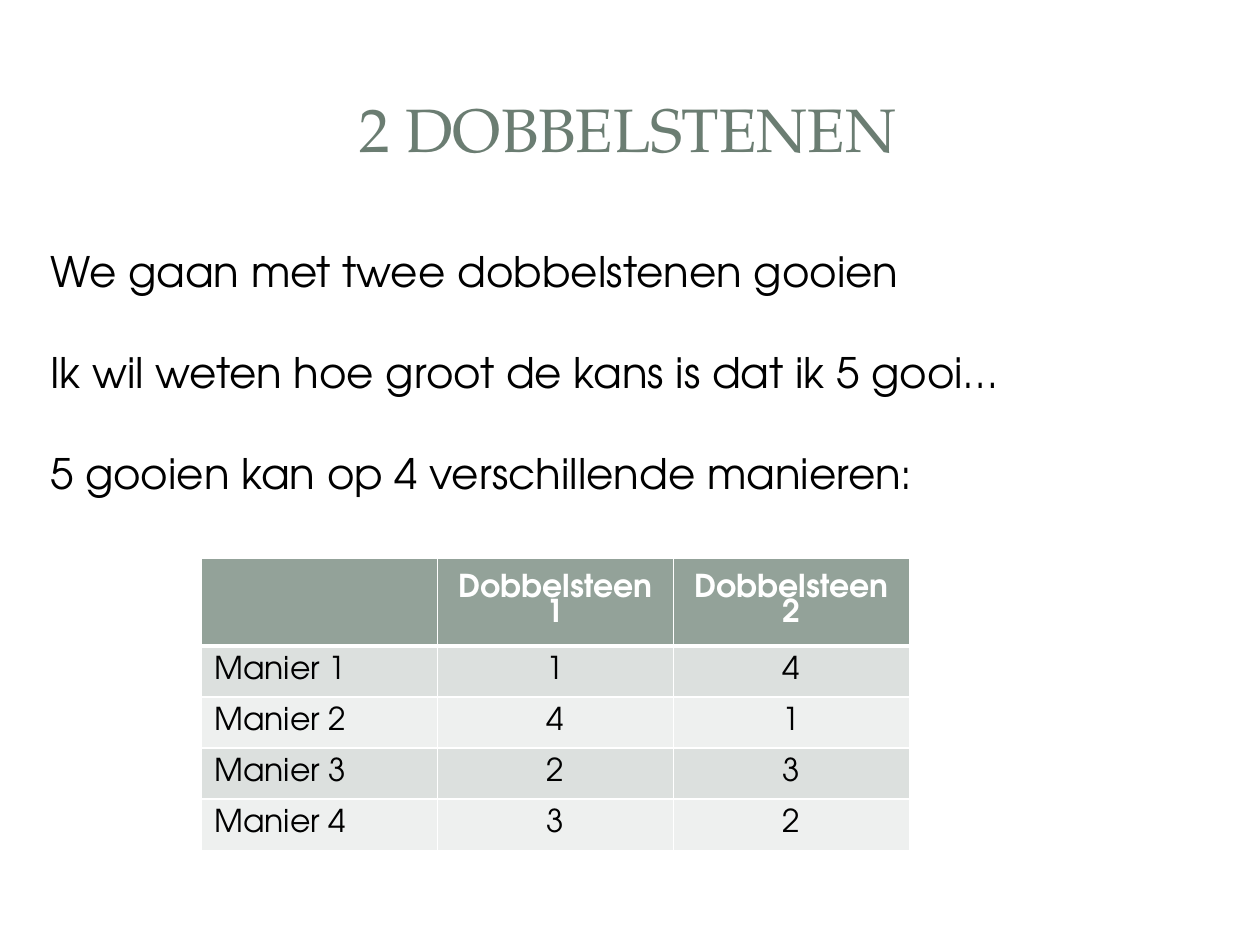
import pptx
import pptx.dml.color
import pptx.enum.shapes
import pptx.enum.text
import pptx.oxml
import pptx.util
from lxml import etree

Pt = pptx.util.Pt
RGBColor = pptx.dml.color.RGBColor
PP_ALIGN = pptx.enum.text.PP_ALIGN
MSO_ANCHOR = pptx.enum.text.MSO_ANCHOR
MSO_SHAPE = pptx.enum.shapes.MSO_SHAPE

TITLE = "2 DOBBELSTENEN"
SENTENCES = [
    "We gaan met twee dobbelstenen gooien",
    "Ik wil weten hoe groot de kans is dat ik 5 gooi…",
    "5 gooien kan op 4 verschillende manieren:",
]
ROWS = [
    ("", "Dobbelsteen 1", "Dobbelsteen 2"),
    ("Manier 1", "1", "4"),
    ("Manier 2", "4", "1"),
    ("Manier 3", "2", "3"),
    ("Manier 4", "3", "2"),
]
# Preset, left, top, width, height, opacity in percent
PANELS = [
    (MSO_SHAPE.ROUNDED_RECTANGLE, 7.2, 7.92, 705.6, 524.88, 100),
    (MSO_SHAPE.RECTANGLE, 21.6, 21.6, 676.8, 104.4, 83),
    (MSO_SHAPE.RECTANGLE, 29.52, 29.52, 660.24, 87.84, 100),
]

TITLE_FONT = "TeX Gyre Pagella"
BODY_FONT = "TeX Gyre Adventor"
WHITE = RGBColor(0xFF, 0xFF, 0xFF)
BLACK = RGBColor(0x00, 0x00, 0x00)
TITLE_GREEN = RGBColor(0x6B, 0x7D, 0x72)
HEADER_GREEN = RGBColor(0x93, 0xA2, 0x99)
BANDS = [RGBColor(0xDC, 0xE0, 0xDE), RGBColor(0xEE, 0xF0, 0xEF)]

COLUMN_WIDTH = 134.9
HEADER_HEIGHT = 49.9
ROW_HEIGHT = 29.2


def add_panel(page, preset, left, top, width, height, opacity):
    panel = page.shapes.add_shape(preset, Pt(left), Pt(top), Pt(width), Pt(height))
    panel.shadow.inherit = False
    panel.fill.solid()
    panel.fill.fore_color.rgb = WHITE
    panel.line.fill.background()
    if preset == MSO_SHAPE.ROUNDED_RECTANGLE:
        panel.adjustments[0] = 0.02
    if opacity < 100:
        color = panel.fill._xPr.find(".//" + pptx.oxml.ns.qn("a:srgbClr"))
        etree.SubElement(color, pptx.oxml.ns.qn("a:alpha"), val=str(opacity * 1000))


def add_span(para, text, font, size, color, bold=False):
    span = para.add_run()
    span.text = text
    span.font.name = font
    span.font.size = Pt(size)
    span.font.color.rgb = color
    span.font.bold = bold


def add_box(page, left, top, width, height, anchor):
    frame = page.shapes.add_textbox(Pt(left), Pt(top), Pt(width), Pt(height)).text_frame
    frame.word_wrap = True
    frame.vertical_anchor = anchor
    return frame


def set_borders(cell, widths):
    """Draw white cell borders; widths maps a side (L, R, T, B) to points."""
    properties = cell._tc.get_or_add_tcPr()
    for position, (side, width) in enumerate(widths.items()):
        line = pptx.oxml.parse_xml(
            '<a:ln%s xmlns:a="http://schemas.openxmlformats.org/drawingml/2006/main" w="%d">'
            '<a:solidFill><a:srgbClr val="%s"/></a:solidFill></a:ln%s>'
            % (side, Pt(width), WHITE, side))
        properties.insert(position, line)


def add_table(page):
    height = HEADER_HEIGHT + ROW_HEIGHT * (len(ROWS) - 1)
    table = page.shapes.add_table(
        len(ROWS), len(ROWS[0]), Pt(115.2), Pt(319.2),
        Pt(COLUMN_WIDTH * len(ROWS[0])), Pt(height)).table
    for column in table.columns:
        column.width = Pt(COLUMN_WIDTH)
    for r, texts in enumerate(ROWS):
        header = r == 0
        table.rows[r].height = Pt(HEADER_HEIGHT if header else ROW_HEIGHT)
        for c, text in enumerate(texts):
            cell = table.cell(r, c)
            cell.vertical_anchor = MSO_ANCHOR.MIDDLE
            cell.fill.solid()
            cell.fill.fore_color.rgb = HEADER_GREEN if header else BANDS[(r - 1) % 2]
            set_borders(cell, {"L": 1, "R": 1, "T": 3 if r == 1 else 1,
                               "B": 3 if header else 1})
            para = cell.text_frame.paragraphs[0]
            para.alignment = PP_ALIGN.CENTER if c else PP_ALIGN.LEFT
            para.line_spacing = 0.87
            if text:
                add_span(para, text, BODY_FONT, 18, WHITE if header else BLACK, header)


def main():
    deck = pptx.Presentation()
    deck.slide_width, deck.slide_height = Pt(720), Pt(540)
    page = deck.slides.add_slide(deck.slide_layouts[6])

    for panel in PANELS:
        add_panel(page, *panel)

    title = add_box(page, 33.84, 32.4, 650.16, 82.08, MSO_ANCHOR.MIDDLE).paragraphs[0]
    title.alignment = PP_ALIGN.CENTER
    add_span(title, TITLE, TITLE_FONT, 35, TITLE_GREEN)

    body = add_box(page, 21.6, 136.8, 675.36, 181.44, MSO_ANCHOR.TOP)
    for i, sentence in enumerate(SENTENCES):
        para = body.add_paragraph() if i else body.paragraphs[0]
        para.space_before = Pt(28.8 if i else 0)
        add_span(para, sentence, BODY_FONT, 24, BLACK)

    add_table(page)
    deck.save("out.pptx")


if __name__ == "__main__":
    main()
